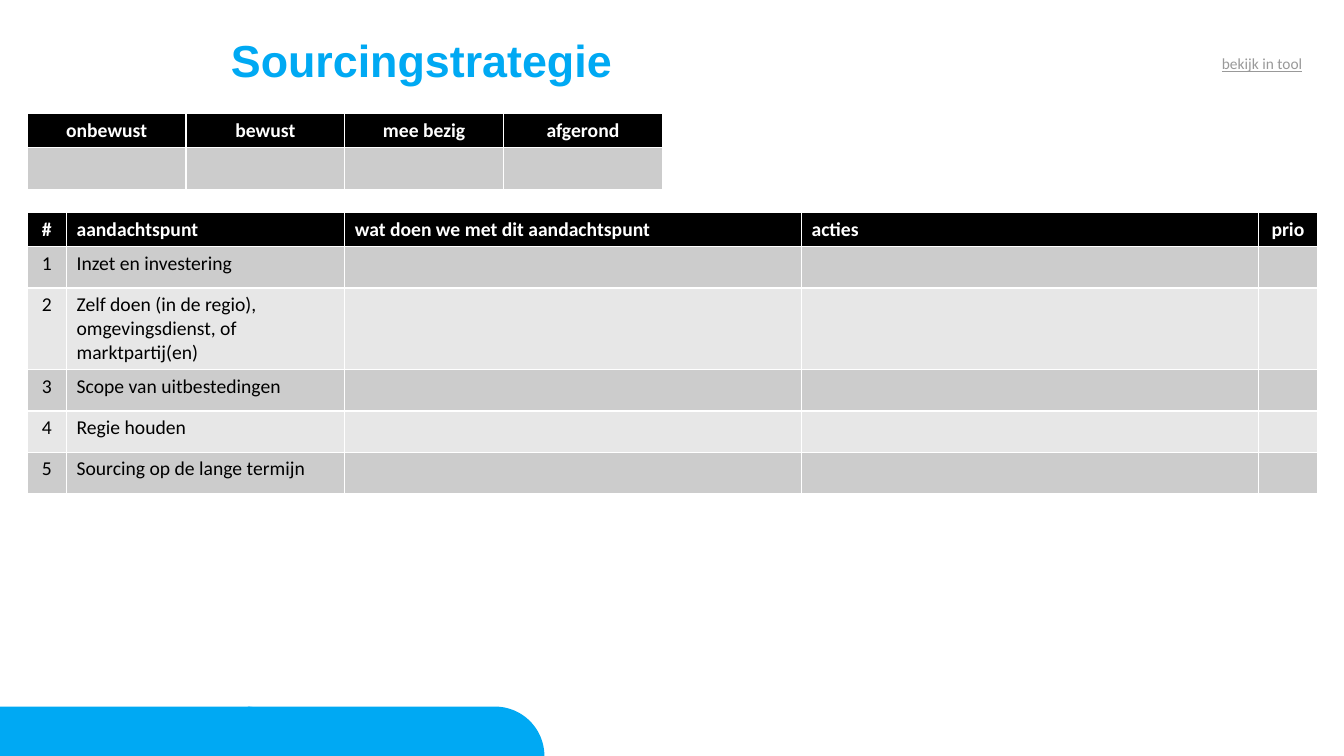
"""Build the sourcing strategy slide with its status and action tables."""
from math import cos, pi, sin

from pptx import Presentation
from pptx.dml.color import RGBColor
from pptx.enum.text import MSO_ANCHOR, PP_ALIGN
from pptx.util import Inches, Pt

LEFT, CENTER = PP_ALIGN.LEFT, PP_ALIGN.CENTER
MIDDLE, TOP = MSO_ANCHOR.MIDDLE, MSO_ANCHOR.TOP
BLUE = RGBColor(0x00, 0xA9, 0xF3)
BLACK = RGBColor(0x00, 0x00, 0x00)
WHITE = RGBColor(0xFF, 0xFF, 0xFF)
GREY = RGBColor(0x99, 0x99, 0x99)
BANDS = RGBColor(0xCC, 0xCC, 0xCC), RGBColor(0xE7, 0xE7, 0xE7)

WIDTH, HEIGHT = 13.33, 7.5
EDGE = 0.27
HEAD, ROW = 0.33, 0.41
TITLE = "Sourcingstrategie"
LINK = "bekijk in tool"
STATES = ["onbewust", "bewust", "mee bezig", "afgerond"]
HEADS = ["#", "aandachtspunt", "wat doen we met dit aandachtspunt", "acties", "prio"]
POINTS = [
    "Inzet en investering",
    "Zelf doen (in de regio), omgevingsdienst, of marktpartij(en)",
    "Scope van uitbestedingen",
    "Regie houden",
    "Sourcing op de lange termijn",
]
TABLES = [
    {"top": 1.13, "cols": [6.3 / len(STATES)] * len(STATES),
     "align": [CENTER] * len(STATES), "rows": [STATES, [""] * len(STATES)]},
    {"top": 2.11, "cols": [0.39, 2.76, 4.53, 4.53, 0.59],
     "align": [CENTER, LEFT, LEFT, LEFT, CENTER],
     "rows": [HEADS] + [[str(n), text, "", "", ""] for n, text in enumerate(POINTS, 1)]},
]
BAR_W, BAR_H, STEP = 2.94, 0.49, 2.47
ARC = 24


def style(font, color, **form):
    font.color.rgb = color
    for key, value in form.items():
        setattr(font, key, value)


def add_bar(slide, left):
    top = HEIGHT - BAR_H
    hub = left + BAR_W - BAR_H
    turns = [pi / 2 * n / ARC for n in range(ARC + 1)]
    curve = [(hub + BAR_H * sin(t), HEIGHT - BAR_H * cos(t)) for t in turns]
    path = slide.shapes.build_freeform(Inches(left), Inches(HEIGHT), scale=1.0)
    path.add_line_segments([(Inches(x), Inches(y)) for x, y in [(left, top)] + curve])
    bar = path.convert_to_shape()
    bar.shadow.inherit = False
    bar.fill.solid()
    bar.fill.fore_color.rgb = BLUE
    bar.line.fill.background()


def add_grid(slide, top, cols, align, rows):
    tall = [HEAD] + [ROW] * (len(rows) - 1)
    box = [Inches(v) for v in (EDGE, top, sum(cols), sum(tall))]
    table = slide.shapes.add_table(len(rows), len(cols), *box).table
    for col, width in zip(table.columns, cols):
        col.width = Inches(width)
    for r, texts in enumerate(rows):
        table.rows[r].height = Inches(tall[r])
        for c, text in enumerate(texts):
            cell = table.cell(r, c)
            cell.fill.solid()
            cell.fill.fore_color.rgb = BANDS[(r - 1) % 2] if r else BLACK
            para = cell.text_frame.paragraphs[0]
            para.alignment = align[c]
            if text:
                para.text = text
                style(para.runs[0].font, BLACK if r else WHITE,
                      name="Calibri", size=Pt(14), bold=r == 0)


def main():
    deck = Presentation()
    deck.slide_width, deck.slide_height = Inches(WIDTH), Inches(HEIGHT)
    slide = deck.slides.add_slide(deck.slide_layouts[5])

    for n in range(2):
        add_bar(slide, n * STEP - 0.01)

    title = slide.shapes.title
    title.left, title.top, title.width, title.height = (
        Inches(v) for v in (2.29, 0.34, 4.66, 0.57))
    frame = title.text_frame
    for side in ("left", "top", "right", "bottom"):
        setattr(frame, "margin_" + side, 0)
    frame.vertical_anchor = MIDDLE
    frame.text = TITLE
    para = frame.paragraphs[0]
    para.alignment, para.line_spacing = LEFT, 0.9
    style(para.runs[0].font, BLUE, name="Arial", size=Pt(32), bold=True)

    for grid in TABLES:
        add_grid(slide, **grid)

    link = slide.shapes.add_textbox(*(Inches(v) for v in (12.02, 0.49, 1.04, 0.29)))
    frame = link.text_frame
    frame.word_wrap, frame.vertical_anchor = True, TOP
    frame.text = LINK
    style(frame.paragraphs[0].runs[0].font, GREY,
          name="Calibri", size=Pt(11), underline=True)

    deck.save("out.pptx")


if __name__ == "__main__":
    main()
